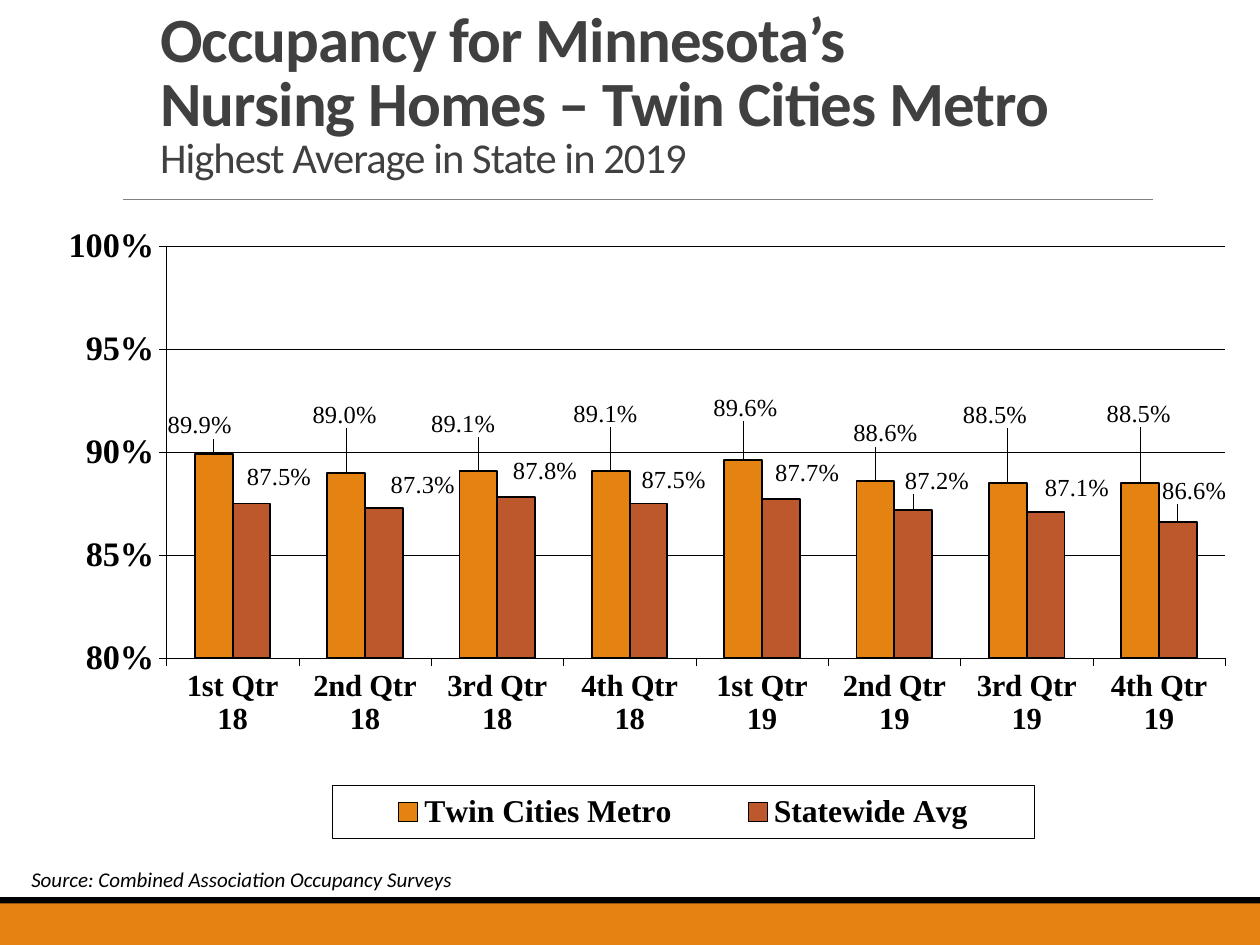
import dataclasses

import lxml.etree
import pptx
import pptx.chart.data
import pptx.dml.color
import pptx.enum.chart
import pptx.enum.shapes
import pptx.enum.text
import pptx.oxml
import pptx.oxml.ns
import pptx.util
from pptx.util import Inches

qn = pptx.oxml.ns.qn


def rgb(code):
    return pptx.dml.color.RGBColor.from_string(code)


@dataclasses.dataclass(frozen=True)
class Theme:
    orange = rgb("E48312")
    rust = rgb("BD582C")
    black = rgb("000000")
    title = rgb("404040")
    rule = rgb("808080")
    body_font = "Calibri"
    chart_font = "Times New Roman"
    title_size = 36
    subtitle_size = 24.3
    value_axis_size = 19.6
    category_size = 17.5
    legend_size = 18.1
    label_size = 14
    source_size = 12
    hairline = 0.27
    bar_line = 1.09


theme = Theme()

QUARTERS = [f"{q} Qtr {year}" for year in (18, 19) for q in ("1st", "2nd", "3rd", "4th")]
# name, colour, values, label shifts in inches
SERIES = [
    ("Twin Cities Metro", theme.orange,
     [0.899, 0.89, 0.891, 0.891, 0.896, 0.886, 0.885, 0.885],
     [(-0.11, -0.08), (-0.01, -0.31), (-0.12, -0.22), (-0.04, -0.3),
      (0.02, -0.27), (0.08, -0.23), (-0.1, -0.39), (-0.01, -0.4)]),
    ("Statewide Avg", theme.rust,
     [0.875, 0.873, 0.878, 0.875, 0.877, 0.872, 0.871, 0.866],
     [(0.22, -0.06), (0.31, -0.03), (0.23, -0.06), (0.2, -0.04),
      (0.21, -0.06), (0.19, -0.08), (0.25, -0.04), (0.13, -0.1)]),
]


def set_font(font, name, size, color, bold=False, italic=False):
    font.name = name
    font.size = pptx.util.Pt(size)
    font.color.rgb = color
    font.bold = bold
    font.italic = italic


def set_line(line, color, width):
    line.color.rgb = color
    line.width = pptx.util.Pt(width)


def chart_element(tag, **attrs):
    el = pptx.oxml.parse_xml(
        f'<c:{tag} xmlns:c="http://schemas.openxmlformats.org/drawingml/2006/chart"/>')
    for key, value in attrs.items():
        el.set(key, str(value))
    return el


def manual_layout(**settings):
    layout = chart_element("layout")
    manual = lxml.etree.SubElement(layout, qn("c:manualLayout"))
    for tag, value in settings.items():
        manual.append(chart_element(tag, val=value))
    return layout


def drop_layout(parent):
    for old in parent.findall(qn("c:layout")):
        parent.remove(old)


def add_title(s, x, y, w, h):
    sp = s.shapes.title
    sp.left, sp.top, sp.width, sp.height = x, y, w, h
    tf = sp.text_frame
    tf.word_wrap = True
    tf.auto_size = pptx.enum.text.MSO_AUTO_SIZE.NONE
    tf.vertical_anchor = pptx.enum.text.MSO_ANCHOR.BOTTOM
    p = tf.paragraphs[0]
    p.alignment = pptx.enum.text.PP_ALIGN.LEFT
    p.line_spacing = 0.85
    lines = [("Occupancy for Minnesota’s ", theme.title_size, True),
             ("Nursing Homes – Twin Cities Metro", theme.title_size, True),
             ("Highest Average in State in 2019", theme.subtitle_size, False)]
    for i, (text, size, bold) in enumerate(lines):
        if i:
            p.add_line_break()
        r = p.add_run()
        r.text = text
        set_font(r.font, theme.body_font, size, theme.title, bold)
        r.font._element.set("spc", "-50")


def add_rule(s, x, y, w):
    line = s.shapes.add_connector(pptx.enum.shapes.MSO_CONNECTOR.STRAIGHT, x, y, x + w, y)
    set_line(line.line, theme.rule, 0.5)
    lxml.etree.SubElement(line._element.spPr, qn("a:effectLst"))


def add_band(s, x, y, w, h, color):
    sp = s.shapes.add_shape(pptx.enum.shapes.MSO_SHAPE.RECTANGLE, x, y, w, h)
    sp.shadow.inherit = False
    sp.fill.solid()
    sp.fill.fore_color.rgb = color
    sp.line.fill.background()


def add_source(s, x, y, w, h):
    tf = s.shapes.add_textbox(x, y, w, h).text_frame
    tf.word_wrap = True
    p = tf.paragraphs[0]
    p.text = "Source: Combined Association Occupancy Surveys"
    set_font(p.font, theme.body_font, theme.source_size, theme.black, italic=True)


def style_axis(axis, size):
    set_font(axis.tick_labels.font, theme.chart_font, size, theme.black, bold=True)
    axis.major_tick_mark = pptx.enum.chart.XL_TICK_MARK.OUTSIDE
    axis.minor_tick_mark = pptx.enum.chart.XL_TICK_MARK.NONE
    set_line(axis.format.line, theme.black, theme.hairline)


def style_series(series, color, shifts, w, h):
    series.format.fill.solid()
    series.format.fill.fore_color.rgb = color
    set_line(series.format.line, theme.black, theme.bar_line)
    series.invert_if_negative = False
    labels = series.data_labels
    labels.show_value = True
    labels.number_format = "0.0%"
    labels.number_format_is_linked = False
    set_font(labels.font, theme.chart_font, theme.label_size, theme.black)
    for i, (dx, dy) in enumerate(shifts):
        label = series.points[i].data_label
        set_font(label.font, theme.chart_font, theme.label_size, theme.black)
        label.position = pptx.enum.chart.XL_LABEL_POSITION.OUTSIDE_END
        idx = series._element.findall(".//" + qn("c:dLbl"))[i].find(qn("c:idx"))
        idx.addnext(chart_element("numFmt", formatCode="0.0%", sourceLinked=0))
        idx.addnext(manual_layout(x=Inches(dx) / w, y=Inches(dy) / h))


def style_legend(chart):
    chart.has_legend = True
    legend = chart.legend
    legend.position = pptx.enum.chart.XL_LEGEND_POSITION.BOTTOM
    legend.include_in_layout = False
    set_font(legend.font, theme.chart_font, theme.legend_size, theme.black, bold=True)
    el = legend._element
    drop_layout(el)
    el.find(qn("c:legendPos")).addnext(manual_layout(
        xMode="edge", yMode="edge", x=0.255, y=0.912, w=0.576, h=0.083))
    frame = chart_element("spPr")
    ln = lxml.etree.SubElement(frame, qn("a:ln"), w=str(pptx.util.Pt(theme.hairline)))
    fill = lxml.etree.SubElement(ln, qn("a:solidFill"))
    lxml.etree.SubElement(fill, qn("a:srgbClr"), val=str(theme.black))
    el.find(qn("c:overlay")).addnext(frame)


def add_occupancy_chart(s, x, y, w, h):
    data = pptx.chart.data.CategoryChartData(number_format="0.0%")
    data.categories = QUARTERS
    for name, _, values, _ in SERIES:
        data.add_series(name, values)
    chart = s.shapes.add_chart(
        pptx.enum.chart.XL_CHART_TYPE.COLUMN_CLUSTERED, x, y, w, h, data).chart
    chart.has_title = False
    set_font(chart.font, theme.chart_font, theme.value_axis_size, theme.black, bold=True)
    style_axis(chart.category_axis, theme.category_size)
    axis = chart.value_axis
    style_axis(axis, theme.value_axis_size)
    axis.minimum_scale, axis.maximum_scale, axis.major_unit = 0.8, 1, 0.05
    axis.tick_labels.number_format = "0%"
    axis.tick_labels.number_format_is_linked = False
    set_line(axis.major_gridlines.format.line, theme.black, theme.hairline)
    plot = chart.plots[0]
    plot.gap_width, plot.overlap = 150, 0
    plot.vary_by_categories = False
    for series, (_, color, _, shifts) in zip(plot.series, SERIES):
        style_series(series, color, shifts, w, h)
    style_legend(chart)
    area = chart._chartSpace.find(".//" + qn("c:plotArea"))
    drop_layout(area)
    area.insert(0, manual_layout(layoutTarget="inner", xMode="edge", yMode="edge",
                                 x=0.119, y=0.071, w=0.869, h=0.643))


def main():
    prs = pptx.Presentation()
    prs.slide_width, prs.slide_height = Inches(10), Inches(7.5)
    s = prs.slides.add_slide(prs.slide_layouts[5])
    add_band(s, 0, Inches(7.13), prs.slide_width, Inches(0.37), theme.orange)
    add_band(s, 0, Inches(7.12), prs.slide_width, Inches(0.05), theme.black)
    add_rule(s, Inches(0.98), Inches(1.58), Inches(8.17))
    add_title(s, Inches(1.17), Inches(0.25), Inches(8.67), Inches(1.25))
    add_occupancy_chart(s, Inches(0.17), Inches(1.59), Inches(9.67), Inches(5.09))
    add_source(s, Inches(0.15), Inches(6.83), Inches(5.27), Inches(0.5))
    prs.save("out.pptx")


if __name__ == "__main__":
    main()
